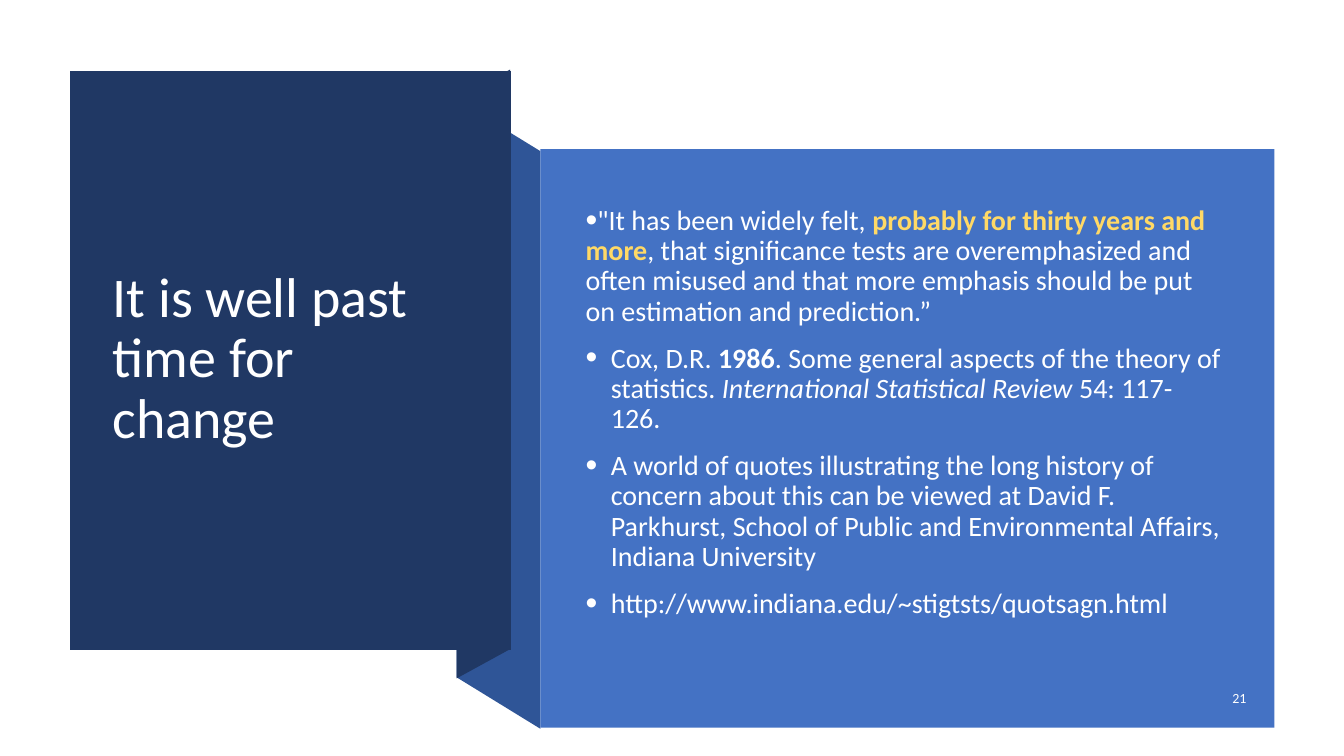
"""Build the slide with a folded title panel and a quotation panel."""
from lxml import etree
from pptx import Presentation
from pptx.dml.color import RGBColor
from pptx.enum import shapes, text
from pptx.oxml import ns
from pptx.util import Inches, Pt

NAVY, FOLD, BLUE, WHITE, GOLD = "203864", "2F5597", "4472C4", "FFFFFF", "FFD966"


def paint(shape, color):
    shape.shadow.inherit = False
    shape.fill.solid()
    shape.fill.fore_color.rgb = RGBColor.from_string(color)
    shape.line.fill.background()


def add_text(box, paragraphs, size, align=text.PP_ALIGN.LEFT, spacing=1.0, before=0, indents=None):
    frame = slide.shapes.add_textbox(*map(Inches, box)).text_frame
    frame.word_wrap = True
    frame.vertical_anchor = text.MSO_ANCHOR.MIDDLE
    for index, runs in enumerate(paragraphs):
        paragraph = frame.add_paragraph() if index else frame.paragraphs[0]
        paragraph.alignment = align
        paragraph.line_spacing = spacing
        paragraph.space_before = Pt(before if index else 0)
        if indents:
            props = paragraph._p.get_or_add_pPr()
            props.set("marL", str(Inches(indents[index])))
            props.set("indent", str(-Inches(indents[index])))
            for tag, key, value in (("a:buSzPct", "val", "120000"),
                                    ("a:buFont", "typeface", "Arial"),
                                    ("a:buChar", "char", "•")):
                etree.SubElement(props, ns.qn(tag)).set(key, value)
        for wording, style in runs:
            run = paragraph.add_run()
            run.text = wording
            run.font.name = "Calibri"
            run.font.size = Pt(size)
            run.font.bold = "b" in style
            run.font.italic = "i" in style
            run.font.color.rgb = RGBColor.from_string(GOLD if "gold" in style else WHITE)


deck = Presentation()
deck.slide_width, deck.slide_height = Inches(13.33), Inches(7.5)
slide = deck.slides.add_slide(deck.slide_layouts[6])

ribbon = [
    (FOLD, [(5.36, 7.23), (4.53, 6.72), (4.53, 0.99), (5.36, 1.5)]),
    (NAVY, [(5.06, 6.44), (4.53, 6.73), (4.53, 0.98), (5.06, 0.69)]),
    (NAVY, [(0.69, 0.7), (5.07, 0.7), (5.07, 6.45), (0.69, 6.45)]),
]
for color, corners in ribbon:
    points = [(Inches(x), Inches(y)) for x, y in corners]
    outline = slide.shapes.build_freeform(*points[0])
    outline.add_line_segments(points[1:], close=True)
    paint(outline.convert_to_shape(), color)

quote_panel = slide.shapes.add_shape(
    shapes.MSO_SHAPE.RECTANGLE, Inches(5.36), Inches(1.48), Inches(7.28), Inches(5.74))
paint(quote_panel, BLUE)

add_text((1.02, 1.07, 3.71, 4.99), [[("It is well past time for change", "")]], 40, spacing=0.9)

quotes = [
    [('"It has been widely felt, ', ""),
     ("probably for thirty years and more", ("b", "gold")),
     (", that significance tests are overemphasized and often misused and that more "
      "emphasis should be put on estimation and prediction.”", "")],
    [("Cox, D.R. ", ""),
     ("1986", "b"),
     (". Some general aspects of the theory of statistics. ", ""),
     ("International Statistical Review", "i"),
     (" 54: 117-126.", "")],
    [("A world of quotes illustrating the long history of concern about this can be viewed "
      "at David F. Parkhurst, School of Public and Environmental Affairs, Indiana University", "")],
    [("http://www.indiana.edu/~stigtsts/quotsagn.html", "")],
]
add_text((5.71, 1.96, 6.51, 4.27), quotes, 20, spacing=0.9, before=12,
         indents=[0, 0.25, 0.25, 0.25])

add_text((11.71, 6.75, 0.75, 0.35), [[("21", "")]], 10, align=text.PP_ALIGN.RIGHT)

deck.save("out.pptx")
